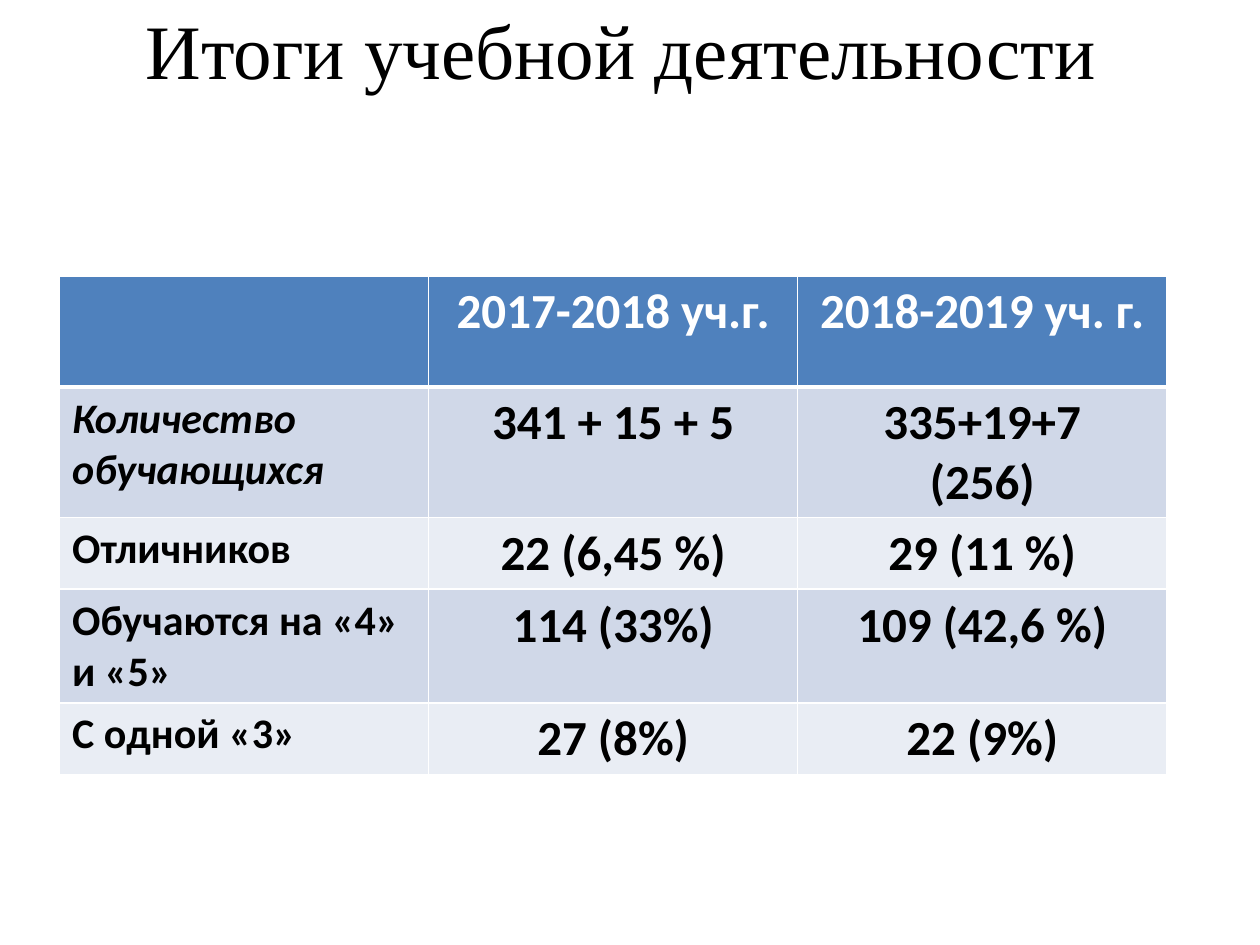
from dataclasses import dataclass

from lxml.etree import SubElement
from pptx import Presentation
from pptx.dml.color import RGBColor
from pptx.enum.text import MSO_ANCHOR as Anchor, PP_ALIGN as Align
from pptx.oxml.ns import qn
from pptx.slide import Slide
from pptx.util import Cm, Pt

HEADER = ["", "2017-2018 уч.г.", "2018-2019 уч. г."]
RESULTS = [
    ["Количество обучающихся", "341 + 15 + 5", "335+19+7\n(256)"],
    ["Отличников", "22 (6,45 %)", "29 (11 %)"],
    ["Обучаются на «4» и «5»", "114 (33%)", "109 (42,6 %)"],
    ["С одной «3»", "27 (8%)", "22 (9%)"],
]
ROW_HEIGHTS = [2.24, 2.29, 1.45, 2.29, 1.45]
COLUMN_WIDTH = 7.44


def color(value):
    return RGBColor.from_string(value)


@dataclass
class ResultsPage:
    """Style of the study results deck and the page being filled."""

    page: Slide
    title_font: str = "Times New Roman"
    table_font: str = "Calibri"
    ink: str = "000000"
    paper: str = "FFFFFF"
    header_fill: str = "4F81BD"
    bands: tuple = ("D0D8E8", "E9EDF4")

    def add_text(self, frame, text, font, size, ink, align, bold=False, italic=False):
        for index, line in enumerate(text.split("\n")):
            para = frame.add_paragraph() if index else frame.paragraphs[0]
            para.alignment = align
            span = para.add_run()
            span.text = line
            span.font.name = font
            span.font.size = Pt(size)
            span.font.bold = bold
            span.font.italic = italic
            span.font.color.rgb = color(ink)

    def title(self, text, left, top, width, height):
        box = self.page.shapes.add_textbox(Cm(left), Cm(top), Cm(width), Cm(height))
        frame = box.text_frame
        frame.word_wrap = True
        frame.vertical_anchor = Anchor.MIDDLE
        self.add_text(frame, text, self.title_font, 44, self.ink, Align.CENTER)

    def borders(self, cell, top, bottom):
        properties = cell._tc.get_or_add_tcPr()
        for side, width in (("L", 1), ("R", 1), ("T", top), ("B", bottom)):
            line = SubElement(properties, qn(f"a:ln{side}"), w=str(Pt(width)))
            fill = SubElement(line, qn("a:solidFill"))
            SubElement(fill, qn("a:srgbClr"), val=self.paper)

    def table(self, rows, left, top, column_width, heights):
        columns = len(rows[0])
        table = self.page.shapes.add_table(
            len(rows), columns, Cm(left), Cm(top),
            Cm(column_width * columns), Cm(sum(heights)),
        ).table
        for column in table.columns:
            column.width = Cm(column_width)
        for r, (texts, height) in enumerate(zip(rows, heights)):
            table.rows[r].height = Cm(height)
            for c, text in enumerate(texts):
                self.cell(table.cell(r, c), text, r, c)

    def cell(self, cell, text, row, column):
        self.borders(cell, 3 if row == 1 else 1, 3 if row == 0 else 1)
        cell.fill.solid()
        fill = self.bands[(row - 1) % 2] if row else self.header_fill
        cell.fill.fore_color.rgb = color(fill)
        if text:
            self.add_text(
                cell.text_frame, text, self.table_font,
                28 if column else 24,
                self.ink if row else self.paper,
                Align.CENTER if column else Align.LEFT,
                bold=True, italic=(row, column) == (1, 0),
            )


def main():
    deck = Presentation()
    deck.slide_width, deck.slide_height = Cm(25.4), Cm(19.05)
    results = ResultsPage(deck.slides.add_slide(deck.slide_layouts[6]))
    results.title("Итоги учебной деятельности", 1.09, 0, 22.86, 1.96)
    results.table([HEADER, *RESULTS], 1.2, 5.56, COLUMN_WIDTH, ROW_HEIGHTS)
    deck.save("out.pptx")


if __name__ == "__main__":
    main()
